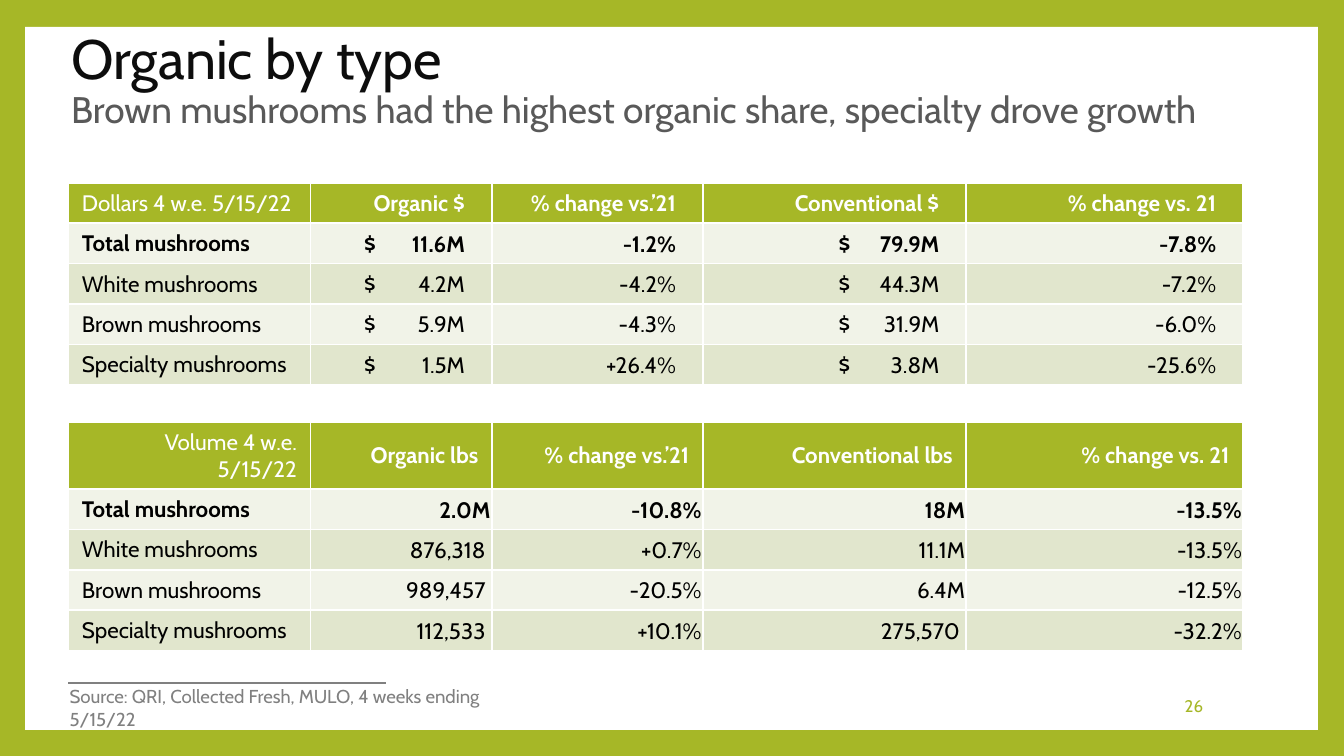
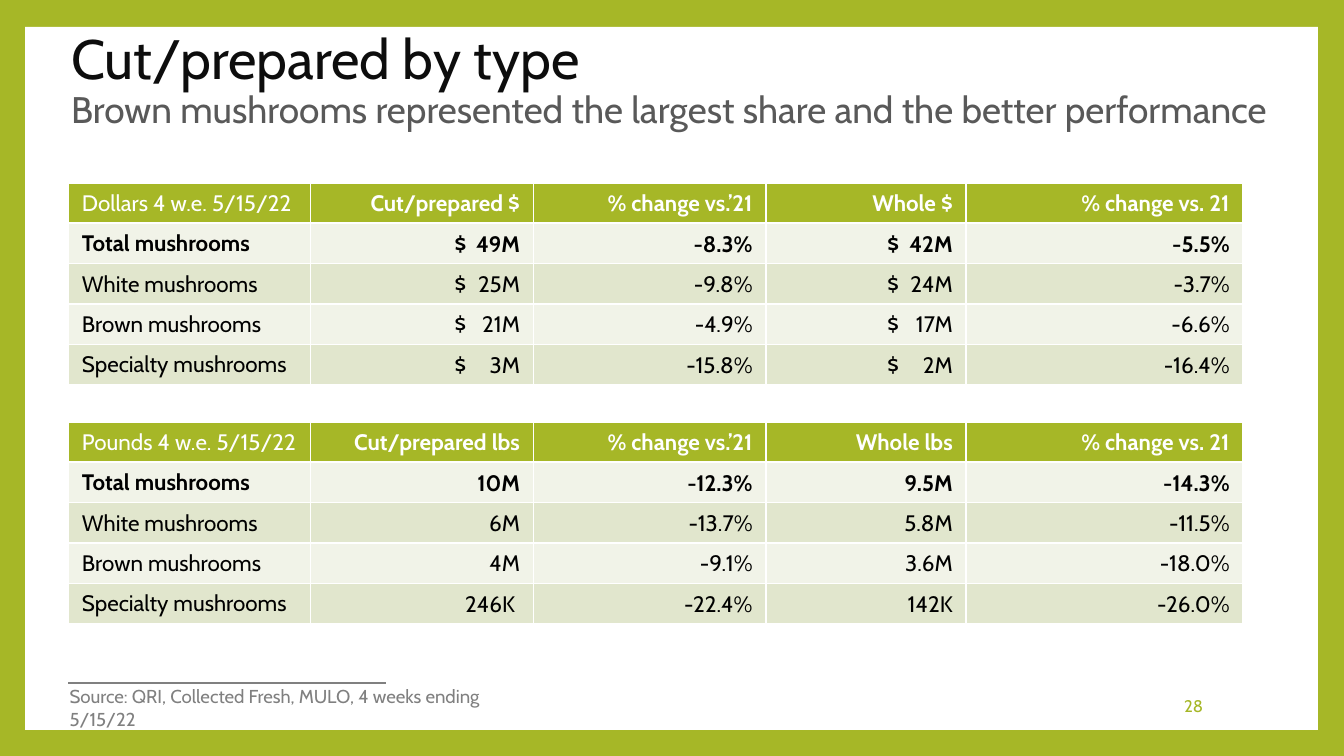
"""Build two slides of mushroom sales tables by type."""
from lxml import etree
from pptx import Presentation
from pptx.dml.color import RGBColor
from pptx.enum.shapes import MSO_CONNECTOR, MSO_SHAPE
from pptx.enum.text import MSO_ANCHOR, PP_ALIGN
from pptx.oxml.ns import qn
from pptx.util import Pt

LEFT, RIGHT = PP_ALIGN.LEFT, PP_ALIGN.RIGHT
TOP, MIDDLE = MSO_ANCHOR.TOP, MSO_ANCHOR.MIDDLE
RECTANGLE, STRAIGHT = MSO_SHAPE.RECTANGLE, MSO_CONNECTOR.STRAIGHT

FONT = "Cabin"
COLORS = {
    "green": "A6B727",
    "white": "FFFFFF",
    "title": "0D0D0D",
    "subtitle": "595959",
    "source": "808080",
    "body": "000000",
    "pale": "F1F3E8",
    "tint": "E1E6CD",
}
TYPES = ["Total mushrooms", "White mushrooms", "Brown mushrooms", "Specialty mushrooms"]
SOURCE = "Source: QRI, Collected Fresh, MULO, 4 weeks ending 5/15/22"
TABLE_LEFT, ROW_HEIGHT = 36.7, 21.2
DOLLARS_TOP, VOLUME_TOP = 98, 226
CELL_INSET = 7.2

SLIDES = [
    {
        "title": "Organic by type",
        "subtitle": "Brown mushrooms had the highest organic share, specialty drove growth",
        "page": "26",
        "widths": [129.6, 97.2, 113.04, 141.12, 148.32],
        "tables": [
            {
                "top": DOLLARS_TOP,
                "header": ["Dollars 4 w.e. 5/15/22", "Organic $", "% change vs.’21",
                           "Conventional $", "% change vs. 21"],
                "values": [
                    ["$ 11.6M", "-1.2%", "$ 79.9M", "-7.8%"],
                    ["$ 4.2M", "-4.2%", "$ 44.3M", "-7.2%"],
                    ["$ 5.9M", "-4.3%", "$ 31.9M", "-6.0%"],
                    ["$ 1.5M", "+26.4%", "$ 3.8M", "-25.6%"],
                ],
                "header_inset": 14.4,
                "value_inset": 14.4,
                "sign_gap": 54,
            },
            {
                "top": VOLUME_TOP,
                "header": ["Volume 4 w.e. 5/15/22", "Organic lbs", "% change vs.’21",
                           "Conventional lbs", "% change vs. 21"],
                "values": [
                    ["2.0M", "-10.8%", "18M", "-13.5%"],
                    ["876,318 ", "+0.7%", "11.1M", "-13.5%"],
                    ["989,457 ", "-20.5%", "6.4M", "-12.5%"],
                    ["112,533 ", "+10.1%", "275,570 ", "-32.2%"],
                ],
                "value_inset": 0.7,
                "corner_align": RIGHT,
            },
        ],
    },
    {
        "title": "Cut/prepared by type",
        "subtitle": "Brown mushrooms represented the largest share and the better performance",
        "page": "28",
        "widths": [129.6, 119.52, 124.56, 107.28, 148.32],
        "tables": [
            {
                "top": DOLLARS_TOP,
                "header": ["Dollars 4 w.e. 5/15/22", "Cut/prepared $", "% change vs.’21",
                           "Whole $", "% change vs. 21"],
                "values": [
                    ["$ 49M", "-8.3%", "$ 42M", "-5.5%"],
                    ["$ 25M", "-9.8%", "$ 24M", "-3.7%"],
                    ["$ 21M", "-4.9%", "$ 17M", "-6.6%"],
                    ["$ 3M", "-15.8%", "$ 2M", "-16.4%"],
                ],
                "sign_gap": 35,
            },
            {
                "top": VOLUME_TOP,
                "header": ["Pounds 4 w.e. 5/15/22", "Cut/prepared lbs", "% change vs.’21",
                           "Whole lbs", "% change vs. 21"],
                "values": [
                    ["10M", "-12.3%", "9.5M", "-14.3%"],
                    ["6M", "-13.7%", "5.8M", "-11.5%"],
                    ["4M", "-9.1%", "3.6M", "-18.0%"],
                    ["246K ", "-22.4%", "142K", "-26.0%"],
                ],
            },
        ],
    },
]


def rgb(name):
    """Return the named colour."""
    return RGBColor.from_string(COLORS[name])


def write(paragraph, text, size=12, color="body", bold=False, align=LEFT):
    """Add a formatted run to a paragraph."""
    paragraph.alignment = align
    run = paragraph.add_run()
    run.text = text
    run.font.name = FONT
    run.font.size = Pt(size)
    run.font.bold = bold
    run.font.color.rgb = rgb(color)


class Deck:
    """Hold the shared style and the current slide."""

    def __init__(self):
        """Start an empty presentation."""
        self.prs = Presentation()
        self.prs.slide_width, self.prs.slide_height = Pt(720), Pt(405)
        self.slide = None

    def new_slide(self):
        """Add a slide with the green frame and white panel."""
        self.slide = self.prs.slides.add_slide(self.prs.slide_layouts[6])
        backdrop = self.slide.background.fill
        backdrop.solid()
        backdrop.fore_color.rgb = rgb("green")
        panel = self.slide.shapes.add_shape(RECTANGLE, Pt(13.5), Pt(14.4), Pt(692.6), Pt(376.6))
        panel.shadow.inherit = False
        panel.fill.solid()
        panel.fill.fore_color.rgb = rgb("white")
        panel.line.fill.background()

    def text_box(self, left, top, width, height, anchor=TOP):
        """Add a wrapping text box and return its first paragraph."""
        frame = self.slide.shapes.add_textbox(Pt(left), Pt(top), Pt(width), Pt(height)).text_frame
        frame.word_wrap = True
        frame.vertical_anchor = anchor
        return frame.paragraphs[0]

    def heading(self, title, subtitle):
        """Add the title with its subtitle on the next line."""
        heading = self.text_box(31, 15.1, 680, 56.9, MIDDLE)
        heading.line_spacing = 0.9
        write(heading, title, size=29.7, color="title")
        heading.add_line_break()
        write(heading, subtitle, size=19.8, color="subtitle")

    def rule(self, left, top, width):
        """Add the thin grey line above the source."""
        rule = self.slide.shapes.add_connector(
            STRAIGHT, Pt(left), Pt(top), Pt(left + width), Pt(top))
        rule.line.color.rgb = rgb("source")
        rule.line.width = Pt(0.79)
        etree.SubElement(rule._element.spPr, qn("a:effectLst"))

    def footer(self, page):
        """Add the rule, the source and the page number."""
        self.rule(36.7, 365.8, 170)
        write(self.text_box(30.2, 363.6, 267, 19.4), SOURCE, size=10, color="source")
        write(self.text_box(550.8, 367.2, 100.8, 21.6, MIDDLE), page,
              size=9, color="green", align=RIGHT)

    def style_cell(self, cell, fill, margins):
        """Give a cell its white borders, fill and margins."""
        properties = cell._tc.get_or_add_tcPr()
        for side in ("a:lnL", "a:lnR", "a:lnT", "a:lnB"):
            border = etree.SubElement(properties, qn(side), w=str(Pt(1)))
            solid = etree.SubElement(border, qn("a:solidFill"))
            etree.SubElement(solid, qn("a:srgbClr"), val=COLORS["white"])
        cell.fill.solid()
        cell.fill.fore_color.rgb = rgb(fill)
        cell.vertical_anchor = MIDDLE
        cell.margin_left, cell.margin_top, cell.margin_right, cell.margin_bottom = map(Pt, margins)

    def value(self, cell, text, width, inset, sign_gap, fill, bold):
        """Fill a value cell, setting a dollar sign apart with a right tab."""
        paragraph = cell.text_frame.paragraphs[0]
        if not text.startswith("$"):
            self.style_cell(cell, fill, (0.7, 0.7, inset, 0))
            write(paragraph, text, bold=bold, align=RIGHT)
            return
        self.style_cell(cell, fill, (width - inset - sign_gap, 0.7, inset - 1, 0))
        write(paragraph, text.replace(" ", "\t"), bold=bold)
        stops = etree.SubElement(paragraph._p.get_or_add_pPr(), qn("a:tabLst"))
        etree.SubElement(stops, qn("a:tab"), pos=str(Pt(sign_gap)), algn="r")

    def table(self, widths, top, header, values, header_inset=CELL_INSET,
              value_inset=CELL_INSET, sign_gap=0, corner_align=LEFT):
        """Add a table of mushroom types with its header row."""
        rows = len(TYPES) + 1
        table = self.slide.shapes.add_table(
            rows, len(widths), Pt(TABLE_LEFT), Pt(top),
            Pt(sum(widths)), Pt(rows * ROW_HEIGHT)).table
        for column, width in zip(table.columns, widths):
            column.width = Pt(width)
        for index, text in enumerate(header):
            cell = table.cell(0, index)
            inset = header_inset if index else CELL_INSET
            self.style_cell(cell, "green", (CELL_INSET, 3.6, inset, 3.6))
            write(cell.text_frame.paragraphs[0], text, color="white", bold=index > 0,
                  align=RIGHT if index else corner_align)
        for row, (kind, figures) in enumerate(zip(TYPES, values), start=1):
            fill = "pale" if row % 2 else "tint"
            total = row == 1
            label = table.cell(row, 0)
            self.style_cell(label, fill, (CELL_INSET, 3.6, CELL_INSET, 3.6))
            write(label.text_frame.paragraphs[0], kind, bold=total)
            for column, figure in enumerate(figures, start=1):
                self.value(table.cell(row, column), figure, widths[column],
                           value_inset, sign_gap, fill, total)


def main():
    """Build and save the slides."""
    deck = Deck()
    for content in SLIDES:
        deck.new_slide()
        deck.heading(content["title"], content["subtitle"])
        for table in content["tables"]:
            deck.table(content["widths"], **table)
        deck.footer(content["page"])
    deck.prs.save("out.pptx")


if __name__ == "__main__":
    main()
